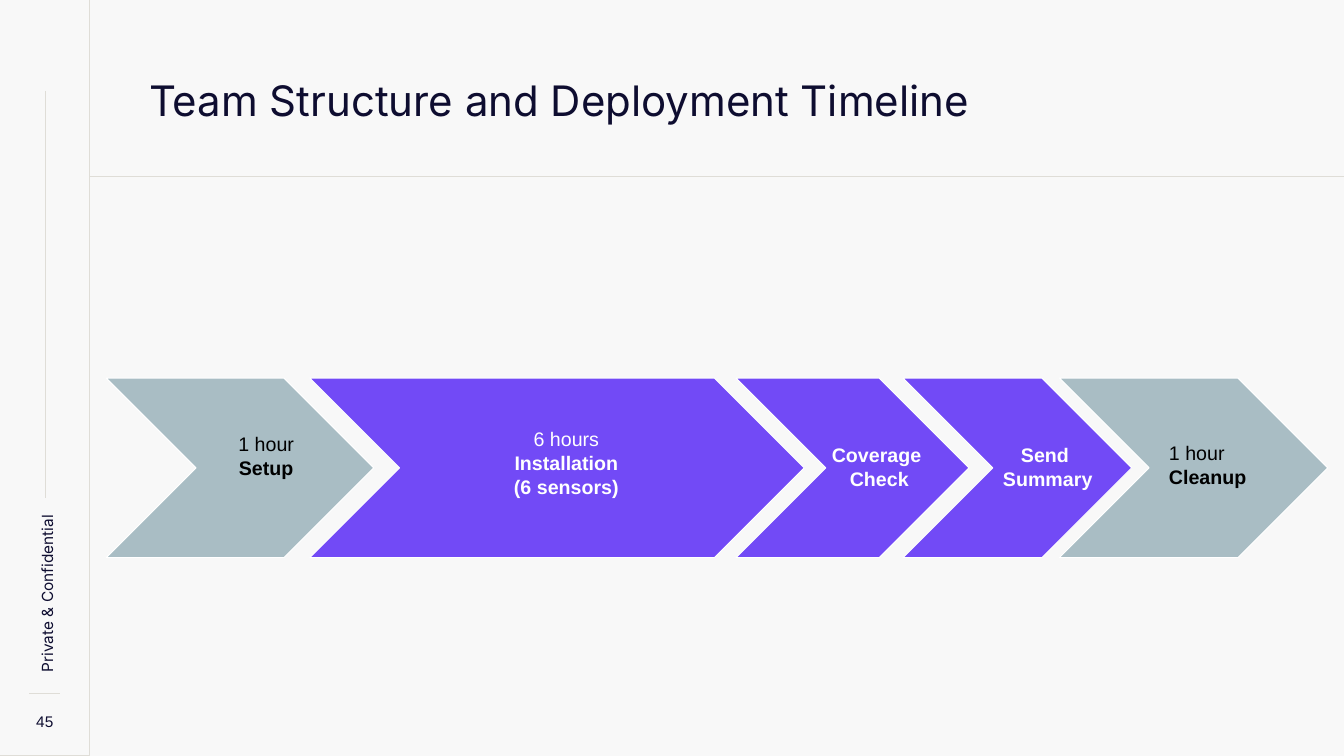
import pptx
import pptx.util
import pptx.dml.color
import pptx.enum.shapes
import pptx.enum.text
import pptx.oxml.ns
import lxml.etree

Cm = pptx.util.Cm
Pt = pptx.util.Pt
ALIGN = pptx.enum.text.PP_ALIGN
ANCHOR = pptx.enum.text.MSO_ANCHOR
SHAPES = pptx.enum.shapes.MSO_SHAPE

COLORS = {
    "background": "F8F8F8",
    "rule": "DFDDD7",
    "navy": "0E0D30",
    "grey": "A9BDC4",
    "violet": "724AF6",
    "white": "FFFFFF",
    "black": "000000",
}

TITLE = "Team Structure and Deployment Timeline"
FOOTER = "Private & Confidential"
PAGE_NUMBER = "45"

SLIDE_WIDTH, SLIDE_HEIGHT = 33.87, 19.05
SIDEBAR_WIDTH = 2.26
HEADER_BOTTOM = 4.45
CHEVRON_TOP, CHEVRON_HEIGHT = 9.53, 4.52
LABEL_HEIGHT = 2.57
LABEL_INSET = 0.25

# Rules as start x, start y, end x, end y in centimetres
SIDEBAR_RULES = [(0.74, 17.48, 1.52, 17.48), (1.14, 2.29, 1.14, 12.55)]

# Each stage: chevron (left, width), label (left, top, width), fill,
# text colour, alignment and lines as (text, bold)
STAGES = [
    ((2.68, 6.74), (5.16, 10.64, 3.1), "grey", "black", ALIGN.CENTER,
     [("1 hour", False), ("Setup", True)]),
    ((7.81, 12.46), (9.45, 10.52, 9.65), "violet", "white", ALIGN.CENTER,
     [("6 hours", False), ("Installation", True), ("(6 sensors)", True)]),
    ((18.55, 5.87), (19.86, 10.92, 4.6), "violet", "white", ALIGN.CENTER,
     [("Coverage ", True), ("Check", True)]),
    ((22.76, 5.76), (24.54, 10.92, 3.73), "violet", "white", ALIGN.CENTER,
     [("Send ", True), ("Summary", True)]),
    ((26.7, 6.76), (29.21, 10.87, 3.1), "grey", "black", ALIGN.LEFT,
     [("1 hour", False), ("Cleanup", True)]),
]


def rgb(name):
    return pptx.dml.color.RGBColor.from_string(COLORS[name])


def add_rule(slide, *ends):
    rule = slide.shapes.add_connector(
        pptx.enum.shapes.MSO_CONNECTOR.STRAIGHT, *(Cm(value) for value in ends))
    rule.line.color.rgb = rgb("rule")
    rule.line.width = Pt(0.75)
    lxml.etree.SubElement(rule._element.spPr, pptx.oxml.ns.qn("a:effectLst"))


def add_block(slide, kind, box, fill, line):
    block = slide.shapes.add_shape(kind, *(Cm(value) for value in box))
    block.shadow.inherit = False
    block.fill.solid()
    block.fill.fore_color.rgb = rgb(fill)
    block.line.color.rgb = rgb(line)
    block.line.width = Pt(0.75)
    return block


def add_text(slide, box, lines, size, color, font="Arial", align=ALIGN.LEFT,
             inset=0, anchor=ANCHOR.TOP, spacing=1.0):
    """Add a wrapped text box; lines holds (text, bold) pairs."""
    text_box = slide.shapes.add_textbox(*(Cm(value) for value in box))
    frame = text_box.text_frame
    frame.word_wrap = True
    frame.vertical_anchor = anchor
    frame.margin_left = frame.margin_right = Cm(inset)
    frame.margin_top = frame.margin_bottom = Cm(inset)
    frame.text = "\n".join(text for text, bold in lines)
    for paragraph, (text, bold) in zip(frame.paragraphs, lines):
        paragraph.alignment = align
        paragraph.line_spacing = spacing
        for run in paragraph.runs:
            run.font.name = font
            run.font.size = Pt(size)
            run.font.bold = bold
            run.font.color.rgb = rgb(color)
    return text_box


def add_frame(slide):
    """Draw the header rule, the sidebar and the title."""
    add_rule(slide, SIDEBAR_WIDTH, HEADER_BOTTOM, SLIDE_WIDTH, HEADER_BOTTOM)
    add_block(slide, SHAPES.RECTANGLE, (0, 0, SIDEBAR_WIDTH, SLIDE_HEIGHT),
              "background", "rule")
    for ends in SIDEBAR_RULES:
        add_rule(slide, *ends)
    add_text(slide, (0.5, 17.6, 1.26, 1.1), [(PAGE_NUMBER, False)], 11, "navy",
             align=ALIGN.CENTER, anchor=ANCHOR.MIDDLE, spacing=1.1)
    footer = add_text(slide, (-1.03, 14.42, 4.37, 0.67), [(FOOTER, False)], 11,
                      "navy", "Inter", anchor=ANCHOR.MIDDLE, spacing=1.15)
    footer.rotation = 270
    add_text(slide, (3.51, 1.63, 24.61, 1.83), [(TITLE, False)], 30, "navy",
             "Inter", inset=LABEL_INSET)


def add_timeline(slide):
    for (left, width), label, fill, color, align, lines in STAGES:
        chevron = add_block(slide, SHAPES.CHEVRON,
                            (left, CHEVRON_TOP, width, CHEVRON_HEIGHT), fill, "white")
        chevron.adjustments[0] = 0.5
        add_text(slide, (*label, LABEL_HEIGHT), lines, 14, color, align=align,
                 inset=LABEL_INSET)


def main():
    presentation = pptx.Presentation()
    presentation.slide_width = Cm(SLIDE_WIDTH)
    presentation.slide_height = Cm(SLIDE_HEIGHT)
    slide = presentation.slides.add_slide(presentation.slide_layouts[6])
    slide.background.fill.solid()
    slide.background.fill.fore_color.rgb = rgb("background")
    add_frame(slide)
    add_timeline(slide)
    presentation.save("out.pptx")


if __name__ == "__main__":
    main()
